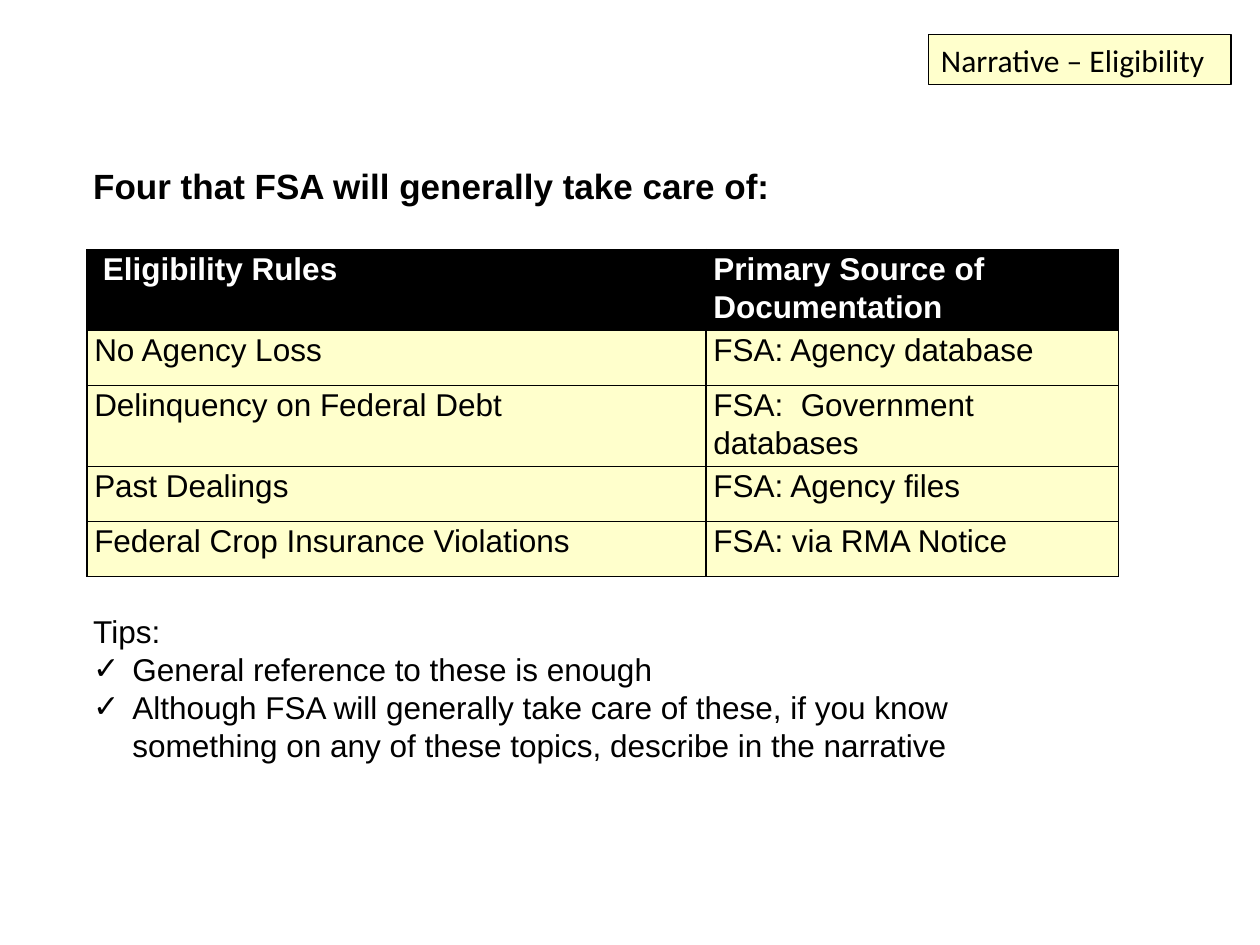
from dataclasses import dataclass

from lxml import etree
from pptx import Presentation
from pptx.dml.color import RGBColor
from pptx.enum.shapes import MSO_SHAPE
from pptx.enum.text import MSO_ANCHOR, PP_ALIGN
from pptx.oxml.ns import qn
from pptx.util import Cm, Pt

RECTANGLE = MSO_SHAPE.RECTANGLE
LEFT = PP_ALIGN.LEFT
TOP, MIDDLE = MSO_ANCHOR.TOP, MSO_ANCHOR.MIDDLE


@dataclass(frozen=True)
class Theme:
    ink: RGBColor = RGBColor(0x00, 0x00, 0x00)
    paper: RGBColor = RGBColor(0xFF, 0xFF, 0xFF)
    cream: RGBColor = RGBColor(0xFF, 0xFF, 0xCC)
    text_font: str = "Arial"
    label_font: str = "Calibri"
    text_size: Pt = Pt(18)
    heading_size: Pt = Pt(20)
    label_line: Pt = Pt(0.75)
    table_line: Pt = Pt(1)


THEME = Theme()

RULES = [
    (" Eligibility Rules", "Primary Source of Documentation"),
    ("No Agency Loss", "FSA: Agency database"),
    ("Delinquency on Federal Debt", "FSA:  Government databases"),
    ("Past Dealings", "FSA: Agency files"),
    ("Federal Crop Insurance Violations", "FSA: via RMA Notice"),
]
TIPS = [
    "General reference to these is enough",
    "Although FSA will generally take care of these, if you know something "
    "on any of these topics, describe in the narrative",
]


def style(paragraph, size=THEME.text_size, font=THEME.text_font,
          color=THEME.ink, bold=False):
    paragraph.alignment = LEFT
    for run in paragraph.runs:
        run.font.size = size
        run.font.name = font
        run.font.color.rgb = color
        run.font.bold = bold


def add_check_bullet(paragraph, indent):
    props = paragraph._p.get_or_add_pPr()
    props.set("marL", str(indent))
    props.set("indent", str(-indent))
    etree.SubElement(props, qn("a:buFont"), typeface="Arial")
    etree.SubElement(props, qn("a:buChar"), char="✓")


def add_borders(cell):
    props = cell._tc.get_or_add_tcPr()
    for position, side in enumerate(("a:lnL", "a:lnR", "a:lnT", "a:lnB")):
        line = etree.Element(qn(side), w=str(THEME.table_line))
        fill = etree.SubElement(line, qn("a:solidFill"))
        etree.SubElement(fill, qn("a:srgbClr"), val=str(THEME.ink))
        props.insert(position, line)  # borders come before the fill


def add_section_label(slide, left, top, width, height):
    label = slide.shapes.add_shape(RECTANGLE, left, top, width, height)
    label.shadow.inherit = False
    label.fill.solid()
    label.fill.fore_color.rgb = THEME.cream
    label.line.color.rgb = THEME.ink
    label.line.width = THEME.label_line
    frame = label.text_frame
    frame.vertical_anchor = MIDDLE
    frame.text = "Narrative – Eligibility"
    style(frame.paragraphs[0], font=THEME.label_font)


def add_heading(slide, left, top, width, height):
    frame = slide.shapes.add_textbox(left, top, width, height).text_frame
    frame.word_wrap = True
    frame.text = "Four that FSA will generally take care of:"
    style(frame.paragraphs[0], size=THEME.heading_size, bold=True)


def add_rules_table(slide, left, top, width, height):
    table = slide.shapes.add_table(
        len(RULES), len(RULES[0]), left, top, width, height).table
    rule_column, source_column = table.columns
    rule_column.width = int(width * 0.6)
    source_column.width = width - rule_column.width
    for row, texts in enumerate(RULES):
        is_header = row == 0
        for column, text in enumerate(texts):
            cell = table.cell(row, column)
            cell.margin_left = cell.margin_right = Cm(0.15)
            cell.margin_top = cell.margin_bottom = 0
            cell.vertical_anchor = TOP
            cell.fill.solid()
            cell.fill.fore_color.rgb = THEME.ink if is_header else THEME.cream
            add_borders(cell)
            cell.text_frame.text = text
            paragraph = cell.text_frame.paragraphs[0]
            paragraph.line_spacing = 1.07
            style(paragraph, bold=is_header,
                  color=THEME.paper if is_header else THEME.ink)


def add_tips(slide, left, top, width, height):
    frame = slide.shapes.add_textbox(left, top, width, height).text_frame
    frame.word_wrap = True
    frame.text = "Tips:"
    for tip in TIPS:
        paragraph = frame.add_paragraph()
        paragraph.text = tip
        add_check_bullet(paragraph, Cm(0.79))
    for paragraph in frame.paragraphs:
        style(paragraph)


def main():
    deck = Presentation()
    deck.slide_width, deck.slide_height = Cm(25.4), Cm(19.05)
    slide = deck.slides.add_slide(deck.slide_layouts[6])

    # Section label in the top right corner
    add_section_label(slide, Cm(18.72), Cm(0.69), Cm(6.1), Cm(1.02))
    # Heading, table and tips
    add_heading(slide, Cm(1.63), Cm(3.2), Cm(15.42), Cm(1.12))
    add_rules_table(slide, Cm(1.75), Cm(5.03), Cm(20.8), Cm(5.55))
    add_tips(slide, Cm(1.63), Cm(12.22), Cm(20.8), Cm(3.33))

    deck.save("out.pptx")


if __name__ == "__main__":
    main()
